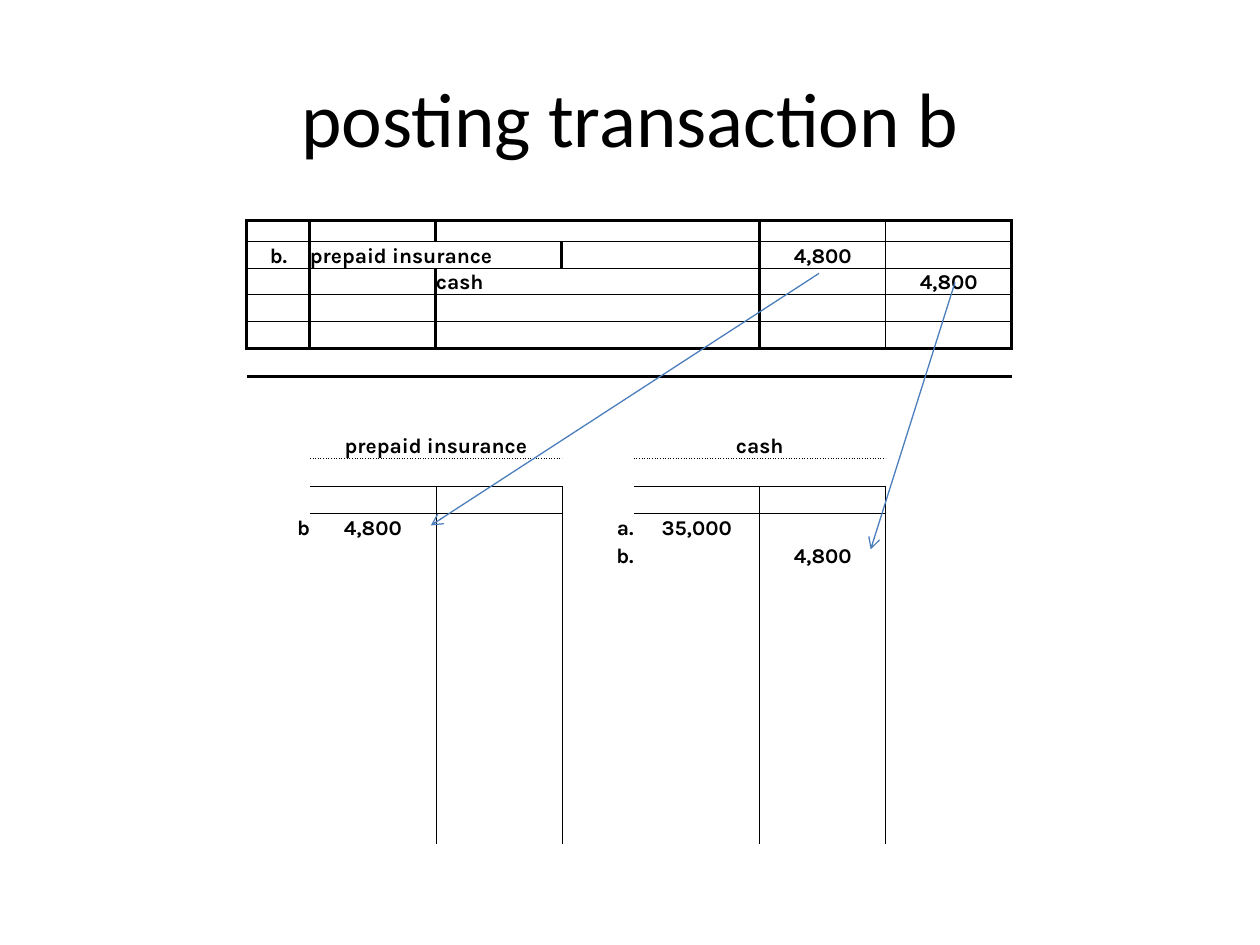
from collections import defaultdict

from lxml import etree
from pptx import Presentation
from pptx import util as u
from pptx.dml.color import RGBColor
from pptx.enum import shapes, text
from pptx.oxml.ns import qn

BLACK, BLUE = "000000", "4B7EBC"
LEFT, CENTER, RIGHT = text.PP_ALIGN.LEFT, text.PP_ALIGN.CENTER, text.PP_ALIGN.RIGHT
NO_STYLE = "{2D5ABB26-0587-4C30-8999-92F81FD0307C}"
THIN, THICK = 0.5, 2

COLS = [0.5, 1, 1, 0.57, 1, 1, 1]
JOURNAL_ROWS = [0.17, 0.21, 0.21, 0.21, 0.22]
ROW_COUNT, TABLE_HEIGHT = 23, 4.95
HEADING_ROW = 8

# (row, column): (wording, alignment)
ENTRIES = {
    (1, 0): ("b.", CENTER), (1, 1): ("prepaid insurance", LEFT),
    (1, 5): ("4,800", CENTER),
    (2, 2): ("cash", LEFT), (2, 6): ("4,800", CENTER),
    (8, 1): ("prepaid insurance", CENTER), (8, 4): ("cash", CENTER),
    (11, 0): ("b", RIGHT), (11, 1): ("4,800", CENTER),
    (11, 3): ("a.", RIGHT), (11, 4): ("35,000", CENTER),
    (12, 3): ("b.", RIGHT), (12, 5): ("4,800", CENTER),
}
MERGED = [(1, 1), (HEADING_ROW, 1), (HEADING_ROW, 4)]


def rgb(hex_color):
    return RGBColor.from_string(hex_color)


def add_run(p, wording, font, size, bold=False):
    r = p.add_run()
    r.text = wording
    r.font.name, r.font.size, r.font.bold = font, u.Pt(size), bold
    r.font.color.rgb = rgb(BLACK)


def add_title(s, wording):
    sp = s.shapes.add_textbox(u.Inches(0.5), u.Inches(0.3), u.Inches(9), u.Inches(1.25))
    tf = sp.text_frame
    tf.word_wrap = True
    tf.vertical_anchor = text.MSO_ANCHOR.MIDDLE
    p = tf.paragraphs[0]
    p.alignment = CENTER
    add_run(p, wording, "Calibri", 44)


def ruled_edges():
    """Collect the borders of each cell as {(row, column): {side: (points, dash)}}."""
    edges = defaultdict(dict)

    def horizontal(row, cols, points, dash="solid"):
        for c in cols:
            edges[row - 1, c]["B"] = edges[row, c]["T"] = points, dash

    def vertical(col, rows, points):
        for r in rows:
            edges[r, col - 1]["R"] = edges[r, col]["L"] = points, "solid"

    # Journal: thick frame, thin rows
    last = len(JOURNAL_ROWS)
    for row in range(last + 1):
        horizontal(row, range(len(COLS)), THICK if row in (0, last) else THIN)
    for col in (0, 1, 5, 6, 7):
        vertical(col, range(last), THIN if col == 6 else THICK)

    # T accounts: dotted heading rule, bar and stem
    for first in (1, 4):
        pair = (first, first + 1)
        horizontal(HEADING_ROW + 1, pair, THIN, "sysDot")
        horizontal(HEADING_ROW + 2, pair, THIN)
        vertical(first + 1, range(HEADING_ROW + 2, ROW_COUNT), THIN)
    return edges


def set_borders(cell, sides):
    tc_pr = cell._tc.get_or_add_tcPr()
    ordered = [side for side in "LRTB" if side in sides]
    for i, side in enumerate(ordered):
        points, dash = sides[side]
        ln = etree.Element(qn("a:ln" + side), w=str(u.Pt(points)))
        fill = etree.SubElement(ln, qn("a:solidFill"))
        etree.SubElement(fill, qn("a:srgbClr"), val=BLACK)
        etree.SubElement(ln, qn("a:prstDash"), val=dash)
        tc_pr.insert(i, ln)


def fill_cell(cell, entry):
    cell.margin_left = cell.margin_right = cell.margin_top = cell.margin_bottom = 0
    cell.vertical_anchor = text.MSO_ANCHOR.BOTTOM
    cell.fill.background()
    p = cell.text_frame.paragraphs[0]
    if entry:
        wording, p.alignment = entry
        add_run(p, wording, "Karla", 12, bold=True)
    else:
        # Small empty text keeps the row at its set height
        etree.SubElement(p._p, qn("a:endParaRPr"), sz="800")


def add_ledger(s):
    frame = s.shapes.add_table(ROW_COUNT, len(COLS), u.Inches(1.96), u.Inches(1.75),
                               u.Inches(sum(COLS)), u.Inches(TABLE_HEIGHT))
    table = frame.table
    table.first_row = table.horz_banding = False
    table._tbl.tblPr.find(qn("a:tableStyleId")).text = NO_STYLE

    # Column widths and row heights
    for column, width in zip(table.columns, COLS):
        column.width = u.Inches(width)
    account_rows = ROW_COUNT - len(JOURNAL_ROWS)
    account_height = (TABLE_HEIGHT - sum(JOURNAL_ROWS)) / account_rows
    for row, height in zip(table.rows, JOURNAL_ROWS + [account_height] * account_rows):
        row.height = u.Inches(height)

    # Cells
    edges = ruled_edges()
    for r in range(ROW_COUNT):
        for c in range(len(COLS)):
            cell = table.cell(r, c)
            fill_cell(cell, ENTRIES.get((r, c)))
            set_borders(cell, edges[r, c])
    for r, c in MERGED:
        table.cell(r, c).merge(table.cell(r, c + 1))


def add_arrow(s, start, end):
    points = [u.Inches(v) for v in (*start, *end)]
    line = s.shapes.add_connector(shapes.MSO_CONNECTOR.STRAIGHT, *points)
    line.line.color.rgb = rgb(BLUE)
    line.line.width = u.Pt(0.75)
    etree.SubElement(line.line._get_or_add_ln(), qn("a:tailEnd"), type="arrow")
    etree.SubElement(line._element.spPr, qn("a:effectLst"))


def main():
    prs = Presentation()
    prs.slide_width, prs.slide_height = u.Inches(10), u.Inches(7.5)
    s = prs.slides.add_slide(prs.slide_layouts[6])

    add_title(s, "posting transaction b")
    add_ledger(s)

    # Journal amounts to their accounts
    add_arrow(s, (6.5, 2.17), (3.42, 4.17))
    add_arrow(s, (7.58, 2.24), (6.91, 4.36))

    prs.save("out.pptx")


if __name__ == "__main__":
    main()
